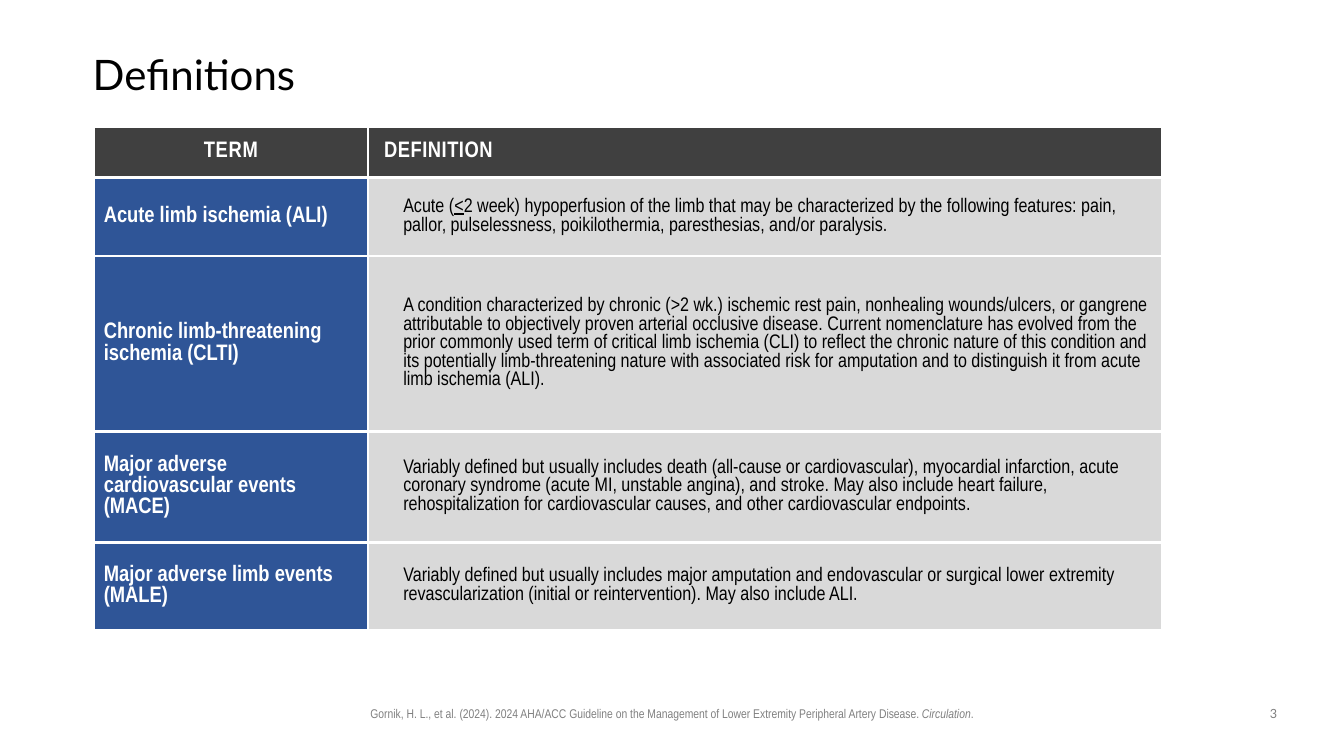
from lxml.etree import SubElement
from pptx import Presentation
from pptx.dml.color import RGBColor
from pptx.enum.text import MSO_ANCHOR as Anchor, PP_ALIGN as Align
from pptx.oxml.ns import qn
from pptx.util import Inches, Pt

NARROW, LATO = "Arial Narrow", "Lato"
WHITE, BLACK, GREY = "FFFFFF", "000000", "808080"
HEADER_FILL, TERM_FILL, DEFINITION_FILL = "404040", "2F5597", "D9D9D9"

# Each definition is a list of (text, underlined) runs
DEFINITIONS = [
    ("Acute limb ischemia (ALI)", [
        ("Acute (", False), ("<", True),
        ("2 week) hypoperfusion of the limb that may be characterized by the "
         "following features: pain, pallor, pulselessness, poikilothermia, "
         "paresthesias, and/or paralysis.", False)]),
    ("Chronic limb-threatening ischemia (CLTI)", [
        ("A condition characterized by chronic (>2 wk.) ischemic rest pain, "
         "nonhealing wounds/ulcers, or gangrene attributable to objectively "
         "proven arterial occlusive disease. Current nomenclature has evolved "
         "from the prior commonly used term of critical limb ischemia (CLI) to "
         "reflect the chronic nature of this condition and its potentially "
         "limb-threatening nature with associated risk for amputation and to "
         "distinguish it from acute limb ischemia (ALI).", False)]),
    ("Major adverse cardiovascular events (MACE)", [
        ("Variably defined but usually includes death (all-cause or "
         "cardiovascular), myocardial infarction, acute coronary syndrome "
         "(acute MI, unstable angina), and stroke. May also include heart "
         "failure, rehospitalization for cardiovascular causes, and other "
         "cardiovascular endpoints.", False)]),
    ("Major adverse limb events (MALE)", [
        ("Variably defined but usually includes major amputation and "
         "endovascular or surgical lower extremity revascularization (initial "
         "or reintervention). May also include ALI.", False)]),
]


def color(value):
    return RGBColor.from_string(value)


class SlideBuilder:
    def __init__(self, page):
        self.page = page

    def run(self, para, text, size, tint, font=NARROW, bold=False,
            italic=False, underline=False, tracking=0):
        span = para.add_run()
        span.text = text
        style = span.font
        style.name, style.size, style.bold = font, Pt(size), bold
        style.italic, style.underline = italic, underline
        style.color.rgb = color(tint)
        if tracking:
            style._element.set("spc", str(round(tracking * 100)))

    def text_box(self, left, top, width, height, align=Align.CENTER):
        box = self.page.shapes.add_textbox(
            Inches(left), Inches(top), Inches(width), Inches(height))
        box.text_frame.word_wrap = True
        para = box.text_frame.paragraphs[0]
        para.alignment = align
        return box.text_frame, para

    def table(self, left, top, widths, heights):
        frame = self.page.shapes.add_table(
            len(heights), len(widths), Inches(left), Inches(top),
            Inches(sum(widths)), Inches(sum(heights)))
        grid = frame.table
        for column, width in zip(grid.columns, widths):
            column.width = Inches(width)
        for row, height in zip(grid.rows, heights):
            row.height = Inches(height)
        return grid

    def cell(self, cell, fill, indent=0, align=Align.LEFT):
        cell.vertical_anchor = Anchor.MIDDLE
        # Borders come before the fill in the cell properties
        properties = cell._tc.get_or_add_tcPr()
        for side in ("lnL", "lnR", "lnT", "lnB"):
            line = SubElement(properties, qn(f"a:{side}"), w=str(Pt(2.25)))
            solid = SubElement(line, qn("a:solidFill"))
            SubElement(solid, qn("a:srgbClr"), val=WHITE)
        cell.fill.solid()
        cell.fill.fore_color.rgb = color(fill)
        para = cell.text_frame.paragraphs[0]
        para.alignment = align
        if indent:
            para_properties = para._p.get_or_add_pPr()
            para_properties.set("marL", str(Inches(indent)))
            para_properties.set("indent", "0")
        return para


def main():
    deck = Presentation()
    deck.slide_width, deck.slide_height = Inches(13.33), Inches(7.5)
    builder = SlideBuilder(deck.slides.add_slide(deck.slide_layouts[6]))

    # Title
    frame, para = builder.text_box(0.92, 0.4, 8.87, 0.72, Align.LEFT)
    frame.margin_left = frame.margin_right = 0
    frame.margin_top = frame.margin_bottom = 0
    frame.vertical_anchor = Anchor.MIDDLE
    para.line_spacing = 0.9
    builder.run(para, "Definitions", 30, BLACK, LATO)

    # Table header
    grid = builder.table(0.93, 1.26, [2.72, 7.88], [0.5, 0.78, 1.74, 1.1, 0.87])
    para = builder.cell(grid.cell(0, 0), HEADER_FILL, align=Align.CENTER)
    builder.run(para, "TERM", 16, WHITE, bold=True, tracking=0.5)
    para = builder.cell(grid.cell(0, 1), HEADER_FILL, indent=0.06)
    builder.run(para, "DEFINITION", 16, WHITE, bold=True, tracking=0.4)

    # Terms and definitions
    for row, (term, definition) in enumerate(DEFINITIONS, start=1):
        para = builder.cell(grid.cell(row, 0), TERM_FILL)
        builder.run(para, term, 16, WHITE, bold=True)
        para = builder.cell(grid.cell(row, 1), DEFINITION_FILL, indent=0.25)
        for text, underline in definition:
            builder.run(para, text, 14, BLACK, underline=underline)

    # Citation and page number
    _, para = builder.text_box(2.94, 6.95, 7.45, 0.25)
    builder.run(para, "Gornik, H. L., et al. (2024). 2024 AHA/ACC Guideline on the "
                "Management of Lower Extremity Peripheral Artery Disease. ", 9, GREY)
    builder.run(para, "Circulation", 9, GREY, italic=True)
    builder.run(para, ".", 9, GREY)
    _, para = builder.text_box(12.42, 6.95, 0.42, 0.26)
    builder.run(para, "3", 9, GREY, LATO)

    deck.save("out.pptx")


if __name__ == "__main__":
    main()
